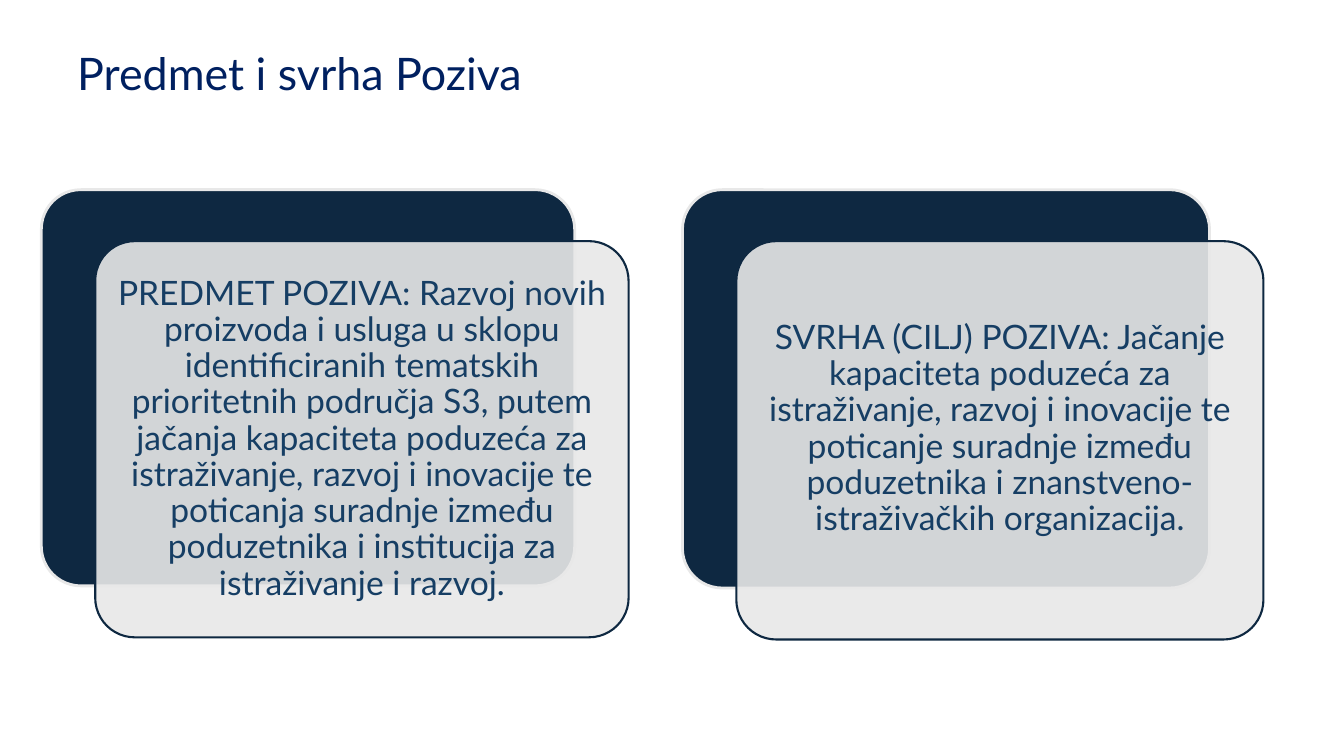
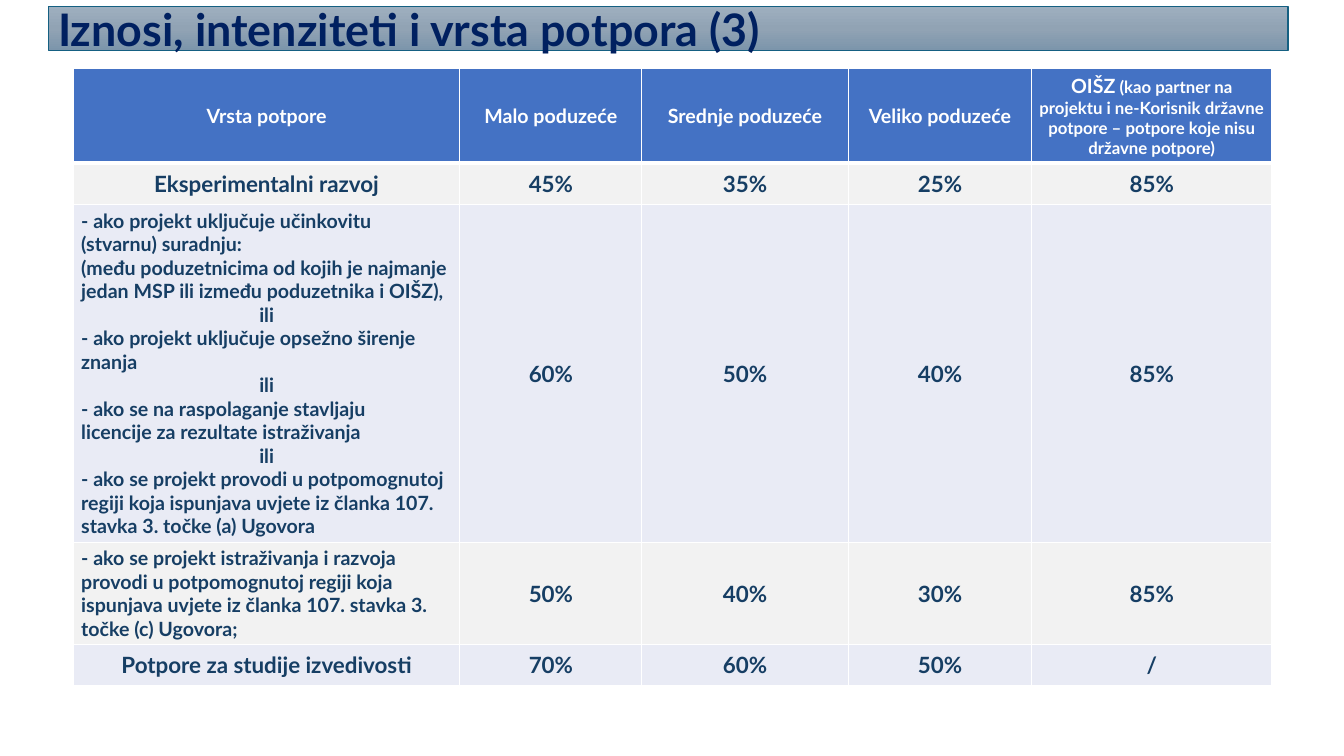
from copy import deepcopy
from dataclasses import dataclass

from pptx import Presentation
from pptx.dml.color import RGBColor as RGB
from pptx.enum.shapes import MSO_SHAPE as SHAPE
from pptx.enum.text import MSO_ANCHOR as ANCHOR, PP_ALIGN as ALIGN
from pptx.oxml.ns import qn
from pptx.util import Pt


@dataclass(frozen=True)
class Theme:
    font: str = "Lato"
    title: str = "002060"
    text: str = "163E64"
    navy: str = "0E2841"
    mist: str = "E8E8E8"
    white: str = "FFFFFF"
    band: tuple = ("9EAFBF", "91A3B4", "7C95AB")
    band_line: str = "156082"
    header: str = "4472C4"
    rows: tuple = ("F2F2F2", "E9EBF5")
    title_size: int = 32
    card_size: int = 24
    value_size: int = 16
    label_size: int = 14
    small_size: int = 12


class Deck:
    def __init__(self, theme):
        self.theme = theme
        self.prs = Presentation()
        self.prs.slide_width, self.prs.slide_height = Pt(960), Pt(540)
        self.slide = None

    def new_slide(self):
        self.slide = self.prs.slides.add_slide(self.prs.slide_layouts[6])

    def run(self, paragraph, text, size, color, bold=False):
        run = paragraph.add_run()
        run.text = text
        font = run.font
        font.name, font.size, font.bold = self.theme.font, Pt(size), bold
        font.color.rgb = RGB.from_string(color)

    def shape(self, kind, box, line, width):
        shape = self.slide.shapes.add_shape(kind, *map(Pt, box))
        shape.shadow.inherit = False
        shape.line.color.rgb = RGB.from_string(line)
        shape.line.width = Pt(width)
        return shape

    def write_title(self, frame, text, bold):
        frame.word_wrap = True
        frame.vertical_anchor = ANCHOR.MIDDLE
        paragraph = frame.paragraphs[0]
        paragraph.alignment = ALIGN.LEFT
        self.run(paragraph, text, self.theme.title_size, self.theme.title, bold)
        return paragraph

    def plain_title(self, text):
        box = self.slide.shapes.add_textbox(Pt(48), Pt(-9), Pt(673), Pt(127))
        self.write_title(box.text_frame, text, False).line_spacing = 0.9

    def band_title(self, text):
        band = self.shape(SHAPE.RECTANGLE, (34.5, 4.5, 885.5, 31.5),
                          self.theme.band_line, 1)
        band.fill.gradient()
        band.fill.gradient_angle = 270
        stop_list = next(band._element.iter(qn("a:gsLst")))
        stop_list.insert(1, deepcopy(stop_list[0]))
        for i, (stop, color) in enumerate(zip(band.fill.gradient_stops, self.theme.band)):
            stop.position = i / 2
            stop.color.rgb = RGB.from_string(color)
        self.write_title(band.text_frame, text, True)

    def rounded(self, box, fill, line, width):
        shape = self.shape(SHAPE.ROUNDED_RECTANGLE, box, line, width)
        shape.adjustments[0] = 0.1
        shape.fill.solid()
        shape.fill.fore_color.rgb = RGB.from_string(fill)
        return shape

    def card(self, left, width, height, text, lift=0):
        """Dark backing with a translucent text panel; lift raises the text."""
        theme, top, shift_x, shift_y = self.theme, 135.5, 38.5, 36.75
        self.rounded((left, top, width, height), theme.navy, theme.mist, 2)
        panel = self.rounded((left + shift_x, top + shift_y, width, height),
                             theme.mist, theme.navy, 1.5)
        color = next(panel._element.spPr.iter(qn("a:srgbClr")))
        color.append(color.makeelement(qn("a:alpha"), {"val": "90000"}))
        frame = panel.text_frame
        frame.word_wrap = True
        frame.vertical_anchor = ANCHOR.MIDDLE
        frame.margin_left = frame.margin_right = frame.margin_top = Pt(7.5)
        frame.margin_bottom = Pt(7.5 + 2 * lift)
        paragraph = frame.paragraphs[0]
        paragraph.alignment, paragraph.line_spacing = ALIGN.CENTER, 0.9
        self.run(paragraph, text, theme.card_size, theme.text)

    def border(self, cell, side, width):
        props = cell._tc.get_or_add_tcPr()
        line = props.makeelement(qn(f"a:ln{side}"), {"w": str(Pt(width))})
        fill = line.makeelement(qn("a:solidFill"), {})
        fill.append(fill.makeelement(qn("a:srgbClr"), {"val": self.theme.white}))
        line.append(fill)
        props.append(line)

    def cell(self, cell, paragraphs, fill, color, roomy, rule_top, rule_bottom):
        """Each paragraph is (alignment, [(text, size), ...])."""
        for side, width in zip("LRTB", (1, 1, rule_top, rule_bottom)):
            self.border(cell, side, width)
        cell.fill.solid()
        cell.fill.fore_color.rgb = RGB.from_string(fill)
        cell.vertical_anchor = ANCHOR.MIDDLE
        side, top, bottom = (5.5, 2.75, 2.75) if roomy else (4.5, 0.5, 0)
        cell.margin_left = cell.margin_right = Pt(side)
        cell.margin_top, cell.margin_bottom = Pt(top), Pt(bottom)
        frame = cell.text_frame
        for i, (alignment, runs) in enumerate(paragraphs):
            paragraph = frame.add_paragraph() if i else frame.paragraphs[0]
            paragraph.alignment = alignment
            for text, size in runs:
                self.run(paragraph, text, size, color, True)

    def table(self, left, top, widths, heights, rows):
        theme = self.theme
        table = self.slide.shapes.add_table(
            len(rows), len(widths), Pt(left), Pt(top),
            Pt(sum(widths)), Pt(sum(heights))).table
        table.horz_banding = False
        for column, width in zip(table.columns, widths):
            column.width = Pt(width)
        for r, (height, row) in enumerate(zip(heights, rows)):
            table.rows[r].height = Pt(height)
            fill = theme.rows[(r - 1) % 2] if r else theme.header
            color = theme.text if r else theme.white
            for c, paragraphs in enumerate(row):
                self.cell(table.cell(r, c), paragraphs, fill, color,
                          roomy=c == 0 and r > 1,
                          rule_top=3 if r == 1 else 1,
                          rule_bottom=1 if r else 3)


THEME = Theme()


def centred(text, size=THEME.value_size):
    return [(ALIGN.CENTER, [(text, size)])]


def conditions(*lines):
    """Left-aligned lines, with the linking word "ili" centred."""
    return [(ALIGN.CENTER if line == "ili" else ALIGN.LEFT,
             [(line, THEME.label_size)]) for line in lines]


def purpose_slide(deck):
    deck.new_slide()
    deck.plain_title("Predmet i svrha Poziva")
    deck.card(29.5, 381, 283,
              "PREDMET POZIVA: Razvoj novih proizvoda i usluga u sklopu "
              "identificiranih tematskih prioritetnih područja S3, putem jačanja "
              "kapaciteta poduzeća za istraživanje, razvoj i inovacije te poticanja "
              "suradnje između poduzetnika i institucija za istraživanje i razvoj.")
    deck.card(487.5, 376.5, 284.5,
              "SVRHA (CILJ) POZIVA: Jačanje kapaciteta poduzeća za istraživanje, "
              "razvoj i inovacije te poticanje suradnje između poduzetnika i "
              "znanstveno-istraživačkih organizacija.", lift=8)


def aid_slide(deck):
    deck.new_slide()
    deck.band_title("Iznosi, intenziteti i vrsta potpora (3)")
    header = [centred(text, THEME.label_size) for text in
              ("Vrsta potpore", "Malo poduzeće", "Srednje poduzeće", "Veliko poduzeće")]
    header.append([(ALIGN.CENTER, [
        ("OIŠZ", THEME.label_size),
        (" (kao partner na projektu i ne-Korisnik državne potpore – potpore koje "
         "nisu državne potpore)", THEME.small_size)])])
    collaboration = conditions(
        "- ako projekt uključuje učinkovitu (stvarnu) suradnju:",
        "(među poduzetnicima od kojih je najmanje jedan MSP ili između "
        "poduzetnika i OIŠZ),",
        "ili",
        "- ako projekt uključuje opsežno širenje znanja",
        "ili",
        "- ako se na raspolaganje stavljaju",
        "licencije za rezultate istraživanja",
        "ili",
        "- ako se projekt provodi u potpomognutoj regiji koja ispunjava uvjete iz "
        "članka 107. stavka 3. točke (a) Ugovora")
    assisted_region = conditions(
        "- ako se projekt istraživanja i razvoja provodi u potpomognutoj regiji "
        "koja ispunjava uvjete iz članka 107. stavka 3. točke (c) Ugovora;")
    intensities = [
        (centred("Eksperimentalni razvoj"), "45%", "35%", "25%", "85%"),
        (collaboration, "60%", "50%", "40%", "85%"),
        (assisted_region, "50%", "40%", "30%", "85%"),
        (centred("Potpore za studije izvedivosti"), "70%", "60%", "50%", "/"),
    ]
    body = [[label, *map(centred, values)] for label, *values in intensities]
    deck.table(52.5, 49, (276, 130, 147.5, 131, 171.5),
               (67.5, 29.5, 241.5, 72.5, 29.5), [header, *body])


def main():
    deck = Deck(THEME)
    purpose_slide(deck)
    aid_slide(deck)
    deck.prs.save("out.pptx")


if __name__ == "__main__":
    main()
